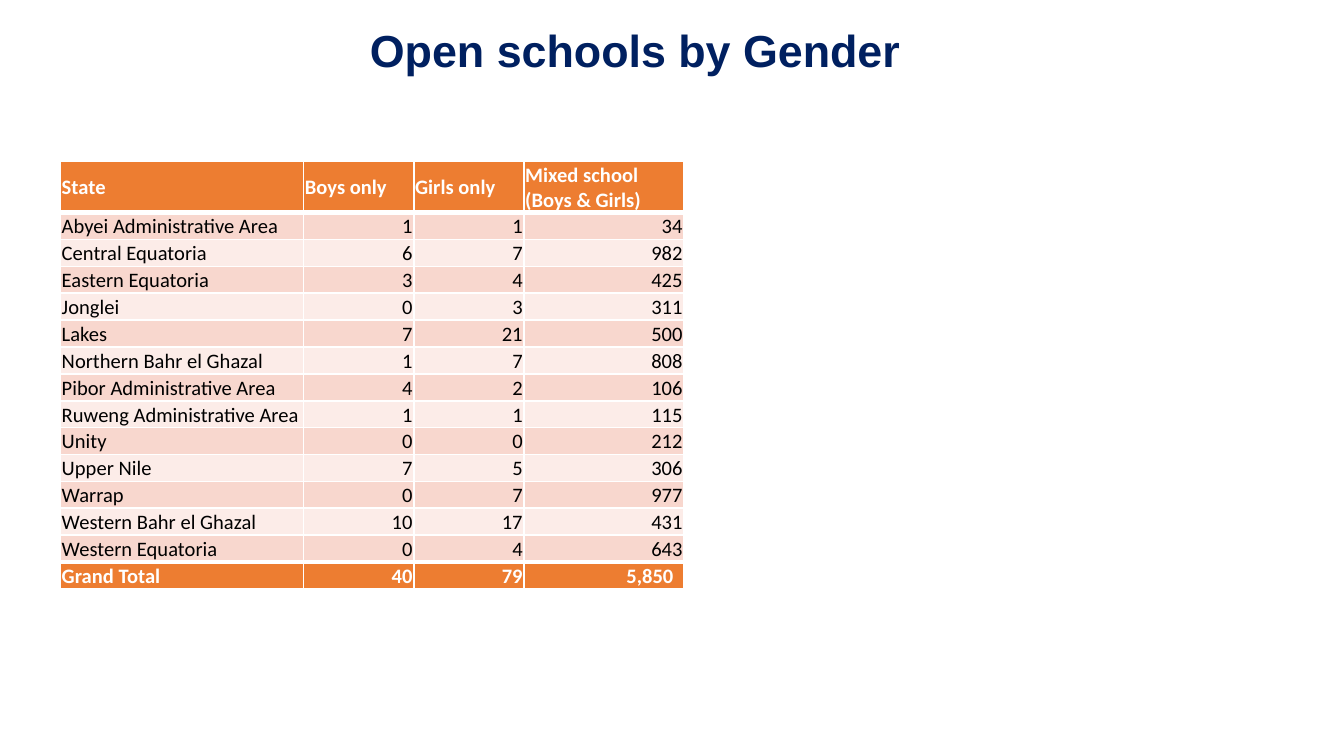
from lxml.etree import SubElement
from pptx import Presentation
from pptx.dml.color import RGBColor
from pptx.enum.text import MSO_ANCHOR, PP_ALIGN
from pptx.oxml.ns import qn
from pptx.util import Pt

NAVY = RGBColor(0x00, 0x20, 0x60)
ORANGE = RGBColor(0xED, 0x7D, 0x31)
PEACH = RGBColor(0xF8, 0xD7, 0xCE)
PALE_PEACH = RGBColor(0xFC, 0xEC, 0xE8)
WHITE = RGBColor(0xFF, 0xFF, 0xFF)
BLACK = RGBColor(0x00, 0x00, 0x00)

HEADERS = ("State", "Boys only", "Girls only", "Mixed school (Boys & Girls)")
SCHOOLS = (
    ("Abyei Administrative Area", 1, 1, 34),
    ("Central Equatoria", 6, 7, 982),
    ("Eastern Equatoria", 3, 4, 425),
    ("Jonglei", 0, 3, 311),
    ("Lakes", 7, 21, 500),
    ("Northern Bahr el Ghazal", 1, 7, 808),
    ("Pibor Administrative Area", 4, 2, 106),
    ("Ruweng Administrative Area", 1, 1, 115),
    ("Unity", 0, 0, 212),
    ("Upper Nile", 7, 5, 306),
    ("Warrap", 0, 7, 977),
    ("Western Bahr el Ghazal", 10, 17, 431),
    ("Western Equatoria", 0, 4, 643),
)
COLUMN_WIDTHS = (130.3, 59, 59, 85.7)
HEADER_HEIGHT = 27.5
ROW_HEIGHT = 14.4
THIN, THICK = 1, 3


def apply_format(target, values):
    for name, value in values.items():
        setattr(target, name, value)


def set_font(paragraph, color, **values):
    apply_format(paragraph.font, values)
    paragraph.font.color.rgb = color


def add_title(slide, left, top, width, height):
    frame = slide.shapes.add_textbox(Pt(left), Pt(top), Pt(width), Pt(height)).text_frame
    apply_format(frame, {"word_wrap": True, "vertical_anchor": MSO_ANCHOR.MIDDLE,
                         "margin_right": Pt(20.6)})
    paragraph = frame.paragraphs[0]
    apply_format(paragraph, {"text": "Open schools by Gender", "alignment": PP_ALIGN.CENTER,
                             "line_spacing": 0.9, "space_after": Pt(6)})
    set_font(paragraph, NAVY, name="Arial", size=Pt(24), bold=True)


def set_borders(cell, top, bottom):
    """Draw white cell borders; call before filling, since lines precede the fill."""
    properties = cell._tc.get_or_add_tcPr()
    for side, width in (("L", THIN), ("R", THIN), ("T", top), ("B", bottom)):
        line = SubElement(properties, qn(f"a:ln{side}"), w=str(Pt(width)))
        fill = SubElement(line, qn("a:solidFill"))
        SubElement(fill, qn("a:srgbClr"), val=str(WHITE))


def format_cell(cell, text, fill, emphasized, alignment, anchor, top, bottom):
    set_borders(cell, top, bottom)
    cell.fill.solid()
    cell.fill.fore_color.rgb = fill
    apply_format(cell, {"text": text, "vertical_anchor": anchor, "margin_left": Pt(0.7),
                        "margin_right": Pt(0.7), "margin_top": Pt(0.7), "margin_bottom": Pt(0)})
    paragraph = cell.text_frame.paragraphs[0]
    paragraph.alignment = alignment
    set_font(paragraph, WHITE if emphasized else BLACK,
             name="Calibri", size=Pt(11), bold=emphasized)


def add_school_table(slide, left, top):
    totals = [sum(counts) for counts in list(zip(*SCHOOLS))[1:]]
    rows = [HEADERS, *SCHOOLS, ("Grand Total", *totals)]
    last = len(rows) - 1
    height = HEADER_HEIGHT + last * ROW_HEIGHT
    table = slide.shapes.add_table(len(rows), len(HEADERS), Pt(left), Pt(top),
                                   Pt(sum(COLUMN_WIDTHS)), Pt(height)).table
    for column, width in zip(table.columns, COLUMN_WIDTHS):
        column.width = Pt(width)
    for row_index, values in enumerate(rows):
        is_header = row_index == 0
        emphasized = row_index in (0, last)
        table.rows[row_index].height = Pt(HEADER_HEIGHT if is_header else ROW_HEIGHT)
        band = PEACH if row_index % 2 else PALE_PEACH
        for column_index, value in enumerate(values):
            is_label = is_header or column_index == 0
            format_cell(
                table.cell(row_index, column_index),
                text=value if is_label else f"{value:,}",
                fill=ORANGE if emphasized else band,
                emphasized=emphasized,
                alignment=PP_ALIGN.LEFT if is_label else PP_ALIGN.RIGHT,
                anchor=MSO_ANCHOR.MIDDLE if is_header else MSO_ANCHOR.BOTTOM,
                top=THICK if row_index in (1, last) else THIN,
                bottom=THICK if row_index in (0, last - 1) else THIN,
            )
    table.cell(last, len(HEADERS) - 1).margin_right = Pt(5.6)


def main():
    presentation = Presentation()
    presentation.slide_width = Pt(720)
    presentation.slide_height = Pt(405)
    slide = presentation.slides.add_slide(presentation.slide_layouts[6])
    add_title(slide, 12.2, 3.6, 669.6, 49)
    add_school_table(slide, 32.4, 86.4)
    presentation.save("out.pptx")


if __name__ == "__main__":
    main()
